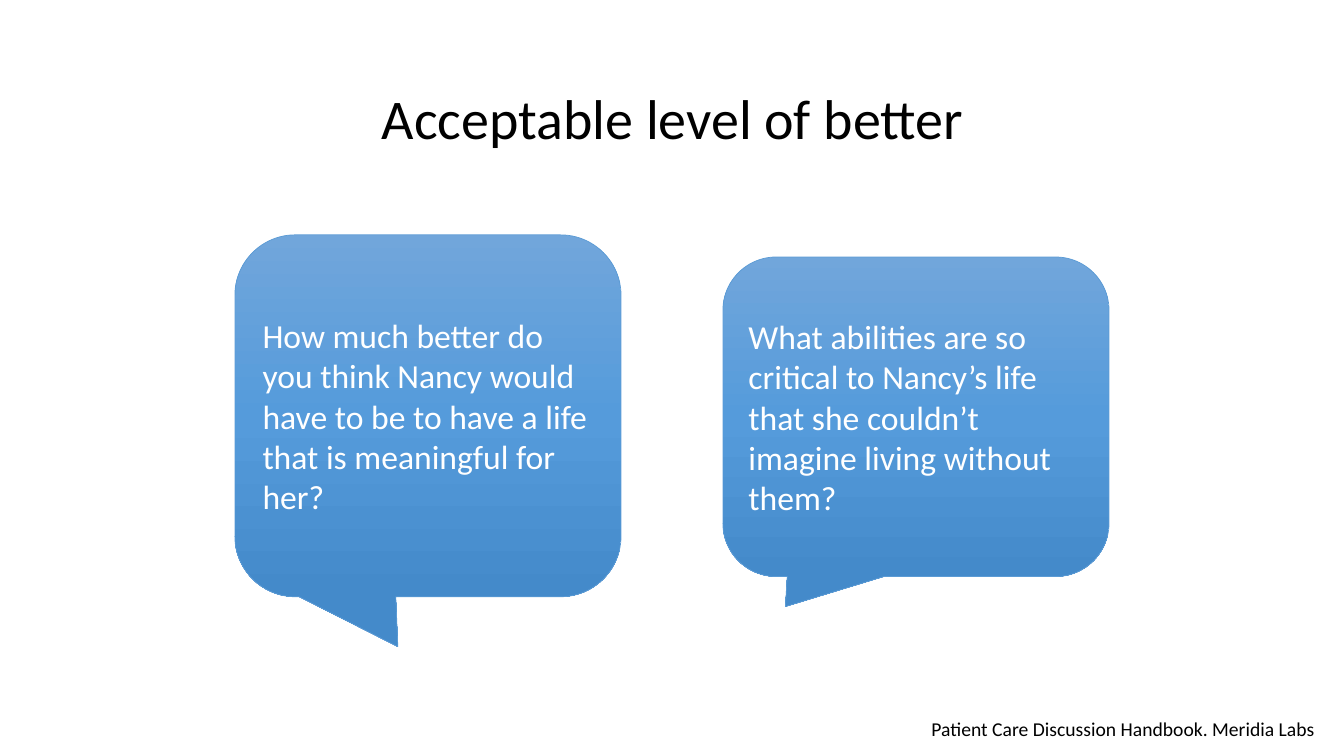
"""Build the slide on the acceptable level of better."""
import copy

import pptx
import pptx.dml.color
import pptx.enum.shapes
import pptx.enum.text
import pptx.util

Inches = pptx.util.Inches
RGBColor = pptx.dml.color.RGBColor
ALIGN = pptx.enum.text.PP_ALIGN
ANCHOR = pptx.enum.text.MSO_ANCHOR

BLACK = RGBColor(0x00, 0x00, 0x00)
WHITE = RGBColor(0xFF, 0xFF, 0xFF)
BUBBLE_EDGE = RGBColor(0x5B, 0x9B, 0xD5)
BUBBLE_SHADES = (
    RGBColor(0x71, 0xA6, 0xDB),
    RGBColor(0x55, 0x9B, 0xDB),
    RGBColor(0x44, 0x8A, 0xCA),
)
CORNER = 0.167


def write(shape, text, size, color, align=ALIGN.LEFT, anchor=ANCHOR.MIDDLE, spacing=None):
    """Fill a shape with one formatted paragraph."""
    frame = shape.text_frame
    frame.word_wrap = True
    frame.vertical_anchor = anchor
    paragraph = frame.paragraphs[0]
    paragraph.alignment = align
    paragraph.line_spacing = spacing
    run = paragraph.add_run()
    run.text = text
    run.font.name = "Calibri"
    run.font.size = pptx.util.Pt(size)
    run.font.color.rgb = color


def shade(fill):
    """Give a fill the evenly stepped downward bubble gradient."""
    fill.gradient()
    fill.gradient_angle = 270
    first_stop = fill.gradient_stops[0]._gs
    first_stop.addnext(copy.deepcopy(first_stop))
    last = len(BUBBLE_SHADES) - 1
    for index, (stop, color) in enumerate(zip(fill.gradient_stops, BUBBLE_SHADES)):
        stop.position = index / last
        stop.color.rgb = color


def add_caption(slide, box, text, size, **text_format):
    """Place black text in the given box."""
    caption = slide.shapes.add_textbox(*map(Inches, box))
    write(caption, text, size, BLACK, **text_format)


def add_question(slide, box, tail, question):
    """Place a speech bubble with its tail tip relative to the box."""
    bubble = slide.shapes.add_shape(
        pptx.enum.shapes.MSO_SHAPE.ROUNDED_RECTANGULAR_CALLOUT, *map(Inches, box)
    )
    bubble.shadow.inherit = False
    for index, value in enumerate((*tail, CORNER)):
        bubble.adjustments[index] = value
    shade(bubble.fill)
    bubble.line.color.rgb = BUBBLE_EDGE
    bubble.line.width = pptx.util.Pt(0.5)
    write(bubble, question, 24, WHITE)


def main():
    """Assemble and save the slide."""
    deck = pptx.Presentation()
    deck.slide_width, deck.slide_height = Inches(13.33), Inches(7.5)
    slide = deck.slides.add_slide(deck.slide_layouts[6])
    add_caption(slide, (2.17, 0.58, 9, 1.25), "Acceptable level of better", 40,
                align=ALIGN.CENTER, spacing=0.9)
    add_question(
        slide, (7.17, 2.55, 3.83, 3.17), (-0.338, 0.594),
        "What abilities are so critical to Nancy’s life that she couldn’t "
        "imagine living without them?",
    )
    add_question(
        slide, (2.33, 2.33, 3.83, 3.59), (-0.078, 0.638),
        "How much better do you think Nancy would have to be to have a life "
        "that is meaningful for her?",
    )
    add_caption(slide, (7.94, 7.06, 5.2, 0.34),
                "Patient Care Discussion Handbook. Meridia Labs", 14,
                align=ALIGN.RIGHT, anchor=ANCHOR.TOP)
    deck.save("out.pptx")


if __name__ == "__main__":
    main()
